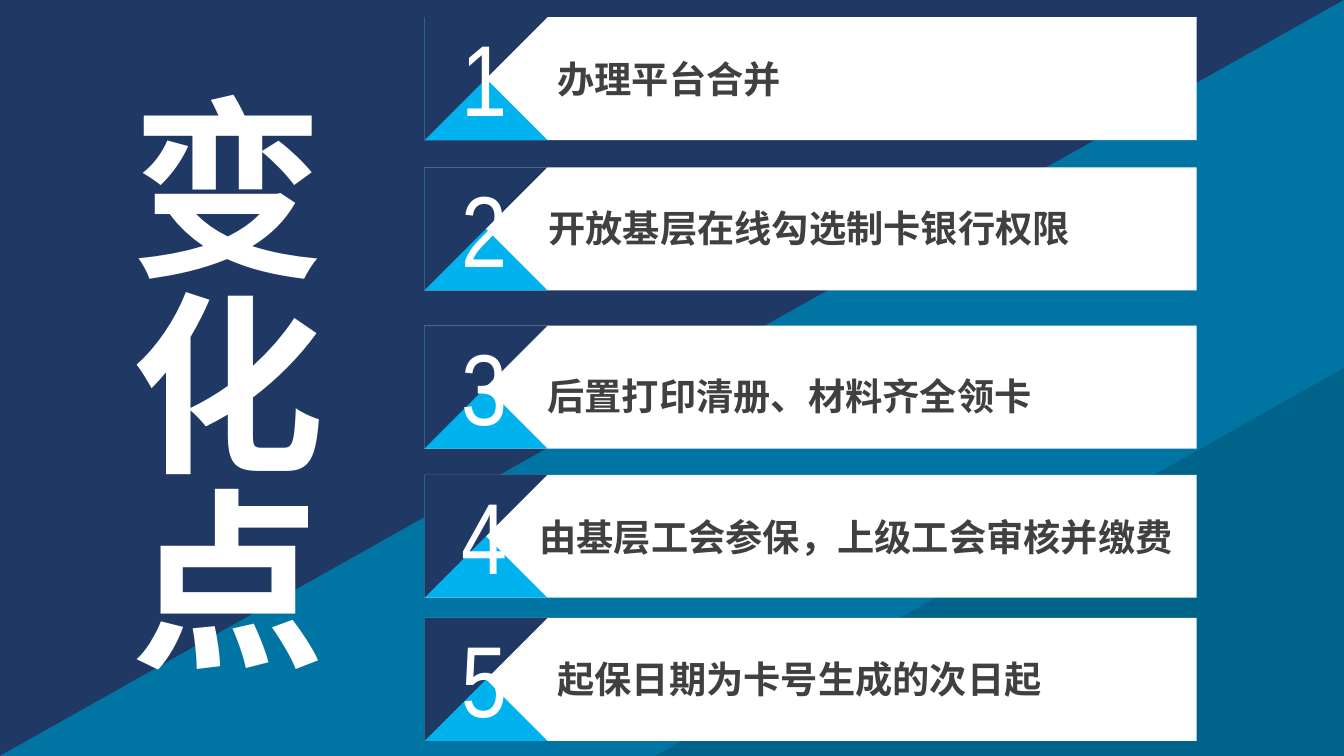
from pptx import Presentation
from pptx.dml.color import RGBColor
from pptx.enum.shapes import MSO_SHAPE
from pptx.enum.text import MSO_ANCHOR, MSO_AUTO_SIZE, PP_ALIGN
from pptx.util import Inches, Pt

RECTANGLE = MSO_SHAPE.RECTANGLE
TRIANGLE = MSO_SHAPE.RIGHT_TRIANGLE
TOP = MSO_ANCHOR.TOP
NO_AUTOFIT = MSO_AUTO_SIZE.NONE
CENTER = PP_ALIGN.CENTER
LEFT = PP_ALIGN.LEFT

NAVY = RGBColor(0x20, 0x38, 0x64)
BLUE = RGBColor(0x00, 0x74, 0xA2)
TEAL = RGBColor(0x00, 0x63, 0x8A)
CYAN = RGBColor(0x00, 0xB3, 0xEE)
WHITE = RGBColor(0xFF, 0xFF, 0xFF)
GRAY = RGBColor(0x40, 0x40, 0x40)

PAGE_WIDTH, PAGE_HEIGHT = 13.33, 7.5
CARD_LEFT, CARD_WIDTH, CARD_HEIGHT = 4.21, 7.66, 1.22

# Each card: top, text, text offset from the card's left and top
CARDS = [
    (0.17, "办理平台合并", 1.22, 0.34),
    (1.66, "开放基层在线勾选制卡银行权限", 1.13, 0.33),
    (3.23, "后置打印清册、材料齐全领卡", 1.12, 0.42),
    (4.71, "由基层工会参保，上级工会审核并缴费", 1.04, 0.34),
    (6.13, "起保日期为卡号生成的次日起", 1.22, 0.33),
]


def add_block(page, kind, box, color, flip=None):
    """Add a plain filled shape, optionally flipped by flipH or flipV."""
    shape = page.shapes.add_shape(kind, *map(Inches, box))
    shape.shadow.inherit = False
    shape.fill.solid()
    shape.fill.fore_color.rgb = color
    shape.line.fill.background()
    if flip:
        shape._element.spPr.xfrm.set(flip, "1")


def format_text(shape, text, size, font, color, bold, align):
    """Write one unwrapped paragraph and return its span."""
    frame = shape.text_frame
    frame.text = text
    frame.word_wrap = False
    frame.auto_size = NO_AUTOFIT
    frame.vertical_anchor = TOP
    para = frame.paragraphs[0]
    para.alignment = align
    span = para.runs[0]
    span.font.size = Pt(size)
    span.font.name = font
    span.font.bold = bold
    span.font.color.rgb = color
    return span


def add_background(page, box):
    """Fill the box with navy and two diagonal bands."""
    left, top, width, height = box
    add_block(page, RECTANGLE, box, NAVY)
    add_block(page, TRIANGLE, box, BLUE, "flipH")
    corner = (left + 6.5, top + 3.65, width - 6.5, height - 3.65)
    add_block(page, TRIANGLE, corner, TEAL, "flipH")


def add_card(page, box, number, text, text_left, text_top):
    """Place a white card with a numbered triangle badge and its text."""
    left, top, width, height = box
    badge = (left, top, height, height)
    add_block(page, RECTANGLE, box, WHITE)
    add_block(page, TRIANGLE, badge, CYAN)
    add_block(page, TRIANGLE, badge, NAVY, "flipV")
    number_box = (left + 0.25, top - 0.06, 0.7, 1.31)
    label_box = (left + text_left, top + text_top, width - text_left, 0.55)
    digit = page.shapes.add_textbox(*map(Inches, number_box))
    format_text(digit, str(number), 72, "Arial Narrow", WHITE, False, CENTER)
    label = page.shapes.add_textbox(*map(Inches, label_box))
    format_text(label, text, 26.6, "Arial", GRAY, True, LEFT)


def add_title(page, box):
    """Set the title placeholder vertically, in front of the background."""
    title = page.shapes.title
    title.left, title.top, title.width, title.height = map(Inches, box)
    span = format_text(title, "变化点", 138, "Arial", WHITE, True, CENTER)
    span._r.get_or_add_rPr().set("spc", "200")
    title.text_frame._txBody.bodyPr.set("vert", "eaVert")
    page.shapes._spTree.append(title._element)


def main():
    """Build the slide and save the deck."""
    deck = Presentation()
    deck.slide_width, deck.slide_height = Inches(PAGE_WIDTH), Inches(PAGE_HEIGHT)
    page = deck.slides.add_slide(deck.slide_layouts[5])
    add_background(page, (0, 0, PAGE_WIDTH, PAGE_HEIGHT))
    for number, (top, text, text_left, text_top) in enumerate(CARDS, 1):
        box = (CARD_LEFT, top, CARD_WIDTH, CARD_HEIGHT)
        add_card(page, box, number, text, text_left, text_top)
    add_title(page, (0.92, 0.86, 2.52, 5.95))
    deck.save("out.pptx")


if __name__ == "__main__":
    main()
